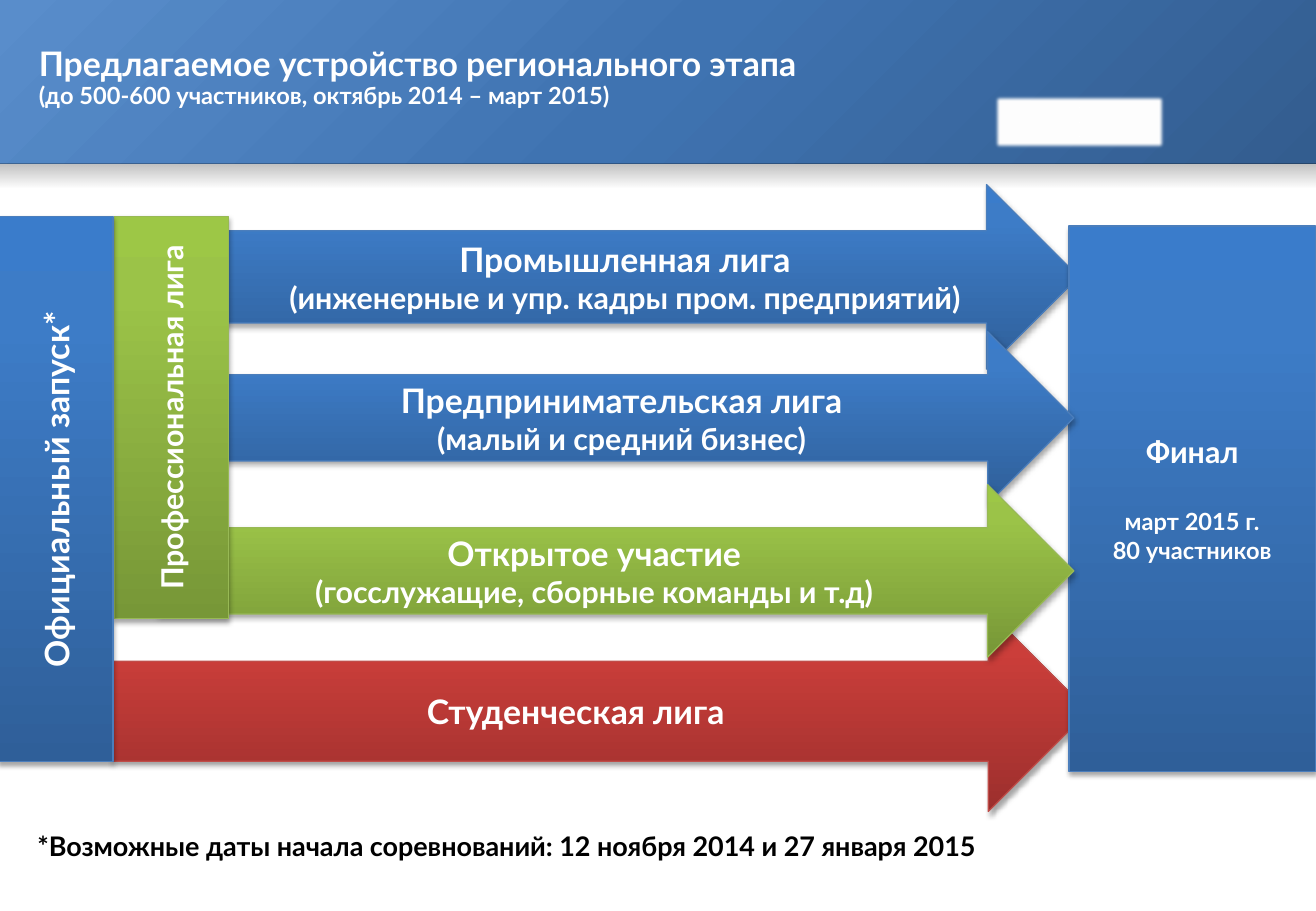
from lxml import etree
from pptx import Presentation
from pptx.dml.color import RGBColor
from pptx.enum import shapes, text
from pptx.oxml.ns import qn
from pptx.util import Pt

C = {"white": "FFFFFF", "black": "000000"}
# Gradient stops (position, colour, opacity) and the outline of each block colour
GRADS = {
    "header": [(0, "335D8F", 100), (50, "3F73B1", 100), (100, "598DCB", 100)],
    "fade": [(0, "000000", 26), (100, "000000", 0)],
    "blue": [(0, "2F5F99", 100), (80, "3D7CC7", 100), (100, "3A7CCB", 100)],
    "green": [(0, "779737", 100), (80, "9BC348", 100), (100, "9DC746", 100)],
    "red": [(0, "9C2F2D", 100), (80, "CB3E3A", 100), (100, "CE3B37", 100)],
}
LINES = {"blue": "4B7EBC", "green": "98B955", "red": "BF4C48"}
RECT, ARROW = shapes.MSO_SHAPE.RECTANGLE, shapes.MSO_SHAPE.RIGHT_ARROW


def add_block(kind, box, grad=None, angle=270):
    """Add a borderless shape, white or with a gradient."""
    sp = s.shapes.add_shape(kind, *[Pt(v) for v in box])
    sp.shadow.inherit = False
    sp.line.fill.background()
    if grad is None:
        sp.fill.solid()
        sp.fill.fore_color.rgb = RGBColor.from_string(C["white"])
        return sp
    fill = etree.Element(qn("a:gradFill"), rotWithShape="1")
    stops = etree.SubElement(fill, qn("a:gsLst"))
    for pos, colour, opacity in GRADS[grad]:
        stop = etree.SubElement(stops, qn("a:gs"), pos=str(pos * 1000))
        clr = etree.SubElement(stop, qn("a:srgbClr"), val=colour)
        if opacity < 100:
            etree.SubElement(clr, qn("a:alpha"), val=str(opacity * 1000))
    etree.SubElement(fill, qn("a:lin"), ang=str(angle * 60000), scaled="0")
    sp.element.spPr.find(qn("a:prstGeom")).addnext(fill)
    return sp


def write(tf, lines, colour="white", align=text.PP_ALIGN.LEFT, spacing=None):
    """Fill a text frame with bold (wording, size) lines."""
    tf.word_wrap = True
    for i, (wording, size) in enumerate(lines):
        p = tf.paragraphs[0] if i == 0 else tf.add_paragraph()
        p.text = wording
        p.alignment = align
        p.line_spacing = spacing
        p.space_before = Pt(0)
        f = p.runs[0].font
        f.name, f.size, f.bold = "Lato", Pt(size), True
        f.color.rgb = RGBColor.from_string(C[colour])


prs = Presentation()
prs.slide_width, prs.slide_height = Pt(780), Pt(540)
s = prs.slides.add_slide(prs.slide_layouts[5])

# Header band, the fade below it and the soft white patch
add_block(RECT, (0, 0, 780, 97.2), "header", 225)
add_block(RECT, (0, 97.2, 780, 13.7), "fade", 90)
patch = add_block(RECT, (588.2, 55.4, 103, 33.8))
etree.SubElement(patch.element.spPr.find(qn("a:effectLst")), qn("a:softEdge"), rad=str(Pt(2.5)))

# Title, raised above the band
title = s.shapes.title
title.element.getparent().append(title.element)
title.left, title.top, title.width, title.height = Pt(15.8), Pt(24.5), Pt(638), Pt(69.8)
tf = title.text_frame
tf.auto_size = text.MSO_AUTO_SIZE.NONE
tf.vertical_anchor = text.MSO_ANCHOR.TOP
write(tf, [("Предлагаемое устройство регионального этапа", 20),
           ("(до 500-600 участников, октябрь 2014 – март 2015)", 14)], spacing=0.9)

# Leagues, launch and final, from back to front
blocks = [
    (ARROW, (128.9, 109.4, 510.5, 109.4), "blue", False,
     [("Промышленная лига", 20), ("(инженерные и упр. кадры пром. предприятий)", 18)]),
    (ARROW, (67, 362.2, 578.2, 118.8), "red", False, [("Студенческая лига", 20)]),
    (RECT, (633.6, 133.9, 146.2, 323.3), "blue", False,
     [("Финал", 18), ("март 2015 г.", 14), ("80 участников", 14)]),
    (ARROW, (126, 196.6, 510.5, 102.2), "blue", False,
     [("Предпринимательская лига", 20), ("(малый и средний бизнес)", 18)]),
    (ARROW, (93.6, 287.3, 542.9, 102.2), "green", False,
     [("Открытое участие", 20), ("(госслужащие, сборные команды и т.д)", 18)]),
    (RECT, (67.7, 128.2, 67.7, 238.3), "green", True, [("Профессиональная лига", 18)]),
    (RECT, (-0.7, 128.2, 67.7, 323.3), "blue", True, [("Официальный запуск*", 20)]),
]
for kind, box, colour, upright, lines in blocks:
    sp = add_block(kind, box, colour)
    sp.line.color.rgb = RGBColor.from_string(LINES[colour])
    sp.line.width = Pt(0.75)
    shadow = etree.SubElement(sp.element.spPr.find(qn("a:effectLst")), qn("a:outerShdw"),
                              blurRad=str(Pt(3.1)), dist=str(Pt(1.8)),
                              dir=str(90 * 60000), rotWithShape="0")
    clr = etree.SubElement(shadow, qn("a:srgbClr"), val=C["black"])
    etree.SubElement(clr, qn("a:alpha"), val="35000")
    tf = sp.text_frame
    tf.vertical_anchor = text.MSO_ANCHOR.MIDDLE
    write(tf, lines, align=text.PP_ALIGN.CENTER)
    if upright:
        tf._txBody.bodyPr.set("vert", "vert270")
    if len(lines) == 3:
        tf.paragraphs[1].space_before = Pt(22)

# Footnote
note = s.shapes.add_textbox(Pt(15.1), Pt(490.3), Pt(638), Pt(34.6))
write(note.text_frame,
      [("*Возможные даты начала соревнований: 12 ноября 2014 и 27 января 2015", 16)],
      "black", spacing=0.9)

prs.save("out.pptx")
